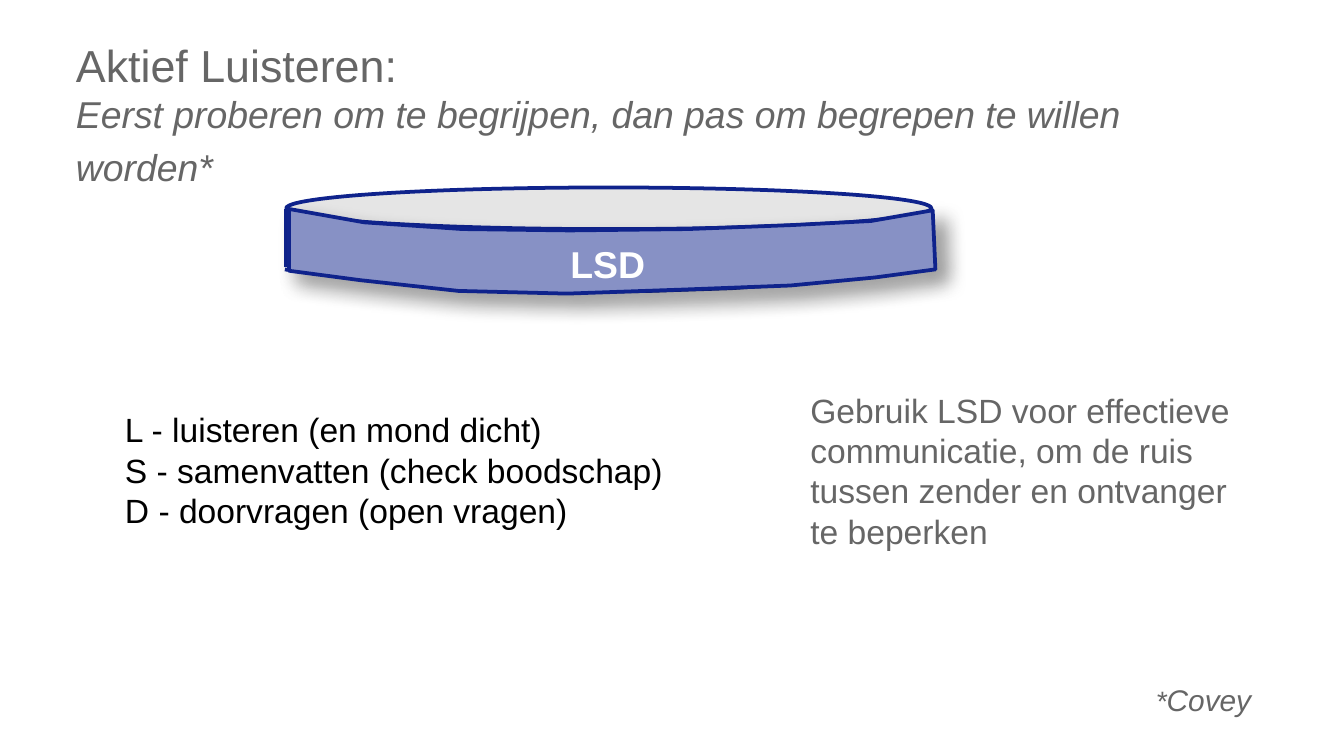
import dataclasses

import lxml.etree
import pptx
import pptx.dml.color
import pptx.enum.shapes
import pptx.enum.text
import pptx.oxml.ns
import pptx.util

PX = 4572  # EMU in one px, 200 px to the inch


@dataclasses.dataclass(frozen=True)
class Theme:
    font: str = "Arial"
    grey: str = "666666"
    black: str = "000000"
    white: str = "FFFFFF"
    outline: str = "0F238C"
    top: str = "E5E5E5"
    side: str = "8791C5"
    line_width: int = 2
    title_size: int = 24
    subtitle_size: int = 20
    body_size: int = 18
    note_size: int = 16
    mark_size: int = 15


THEME = Theme()


def color(value):
    return pptx.dml.color.RGBColor.from_string(value)


def lengths(*values):
    return [pptx.util.Emu(value * PX) for value in values]


def add_text(slide, box, paragraphs, size=THEME.body_size, fill=THEME.grey, bold=False,
             italic=False, inset=0, wrap=True, anchor=pptx.enum.text.MSO_ANCHOR.TOP):
    """Each paragraph is a string or a list of (text, format overrides)."""
    shape = slide.shapes.add_textbox(*lengths(*box))
    frame = shape.text_frame
    frame.word_wrap = wrap
    frame.vertical_anchor = anchor
    frame.margin_left = frame.margin_right = pptx.util.Emu(inset * PX)
    frame.margin_top = frame.margin_bottom = pptx.util.Emu(inset * PX)
    for index, content in enumerate(paragraphs):
        paragraph = frame.paragraphs[0] if index == 0 else frame.add_paragraph()
        runs = [(content, {})] if isinstance(content, str) else content
        for text, overrides in runs:
            if text == "\n":
                paragraph.add_line_break()
                continue
            run = paragraph.add_run()
            run.text = text
            run.font.name = THEME.font
            run.font.size = pptx.util.Pt(overrides.get("size", size))
            run.font.bold = bold
            run.font.italic = overrides.get("italic", italic)
            run.font.color.rgb = color(fill)
    return shape


def style(shape, fill=None, shadow=True):
    """Outline every part alike; add the fill and drop shadow when wanted."""
    shape.line.color.rgb = color(THEME.outline)
    shape.line.width = pptx.util.Pt(THEME.line_width)
    if fill:
        shape.fill.solid()
        shape.fill.fore_color.rgb = color(fill)
    elif hasattr(shape, "fill"):
        shape.fill.background()
    name = pptx.oxml.ns.qn
    effects = lxml.etree.SubElement(shape._element.spPr, name("a:effectLst"))
    if shadow:
        outer = lxml.etree.SubElement(
            effects, name("a:outerShdw"), blurRad=str(pptx.util.Pt(10)),
            dist=str(pptx.util.Pt(8)), dir=str(45 * 60000), algn="ctr", rotWithShape="0")
        shade = lxml.etree.SubElement(outer, name("a:srgbClr"), val=THEME.black)
        lxml.etree.SubElement(shade, name("a:alpha"), val="35000")


def add_outline(slide, left, top, points, close):
    builder = slide.shapes.build_freeform(*points[0], scale=PX)
    builder.add_line_segments(points[1:], close=close)
    return builder.convert_to_shape(*lengths(left, top))


def bezier(start, first, second, end, steps=16):
    points = []
    for step in range(steps + 1):
        t = step / steps
        weights = ((1 - t) ** 3, 3 * t * (1 - t) ** 2, 3 * t ** 2 * (1 - t), t ** 3)
        points.append(tuple(
            sum(weight * value for weight, value in zip(weights, axis))
            for axis in zip(start, first, second, end)))
    return points


def add_heading(slide, box):
    add_text(
        slide, box,
        [[("Aktief Luisteren: ", {}), ("\n", {}),
          ("Eerst proberen om te begrijpen, dan pas om begrepen te willen worden*",
           {"size": THEME.subtitle_size, "italic": True}),
          (" ", {"italic": True})]],
        size=THEME.title_size, inset=7, anchor=pptx.enum.text.MSO_ANCHOR.BOTTOM)


def add_disc(slide, box):
    left, top, width, height = box

    # Top face
    face = slide.shapes.add_shape(
        pptx.enum.shapes.MSO_SHAPE.OVAL, *lengths(left, top, width, 62))
    style(face, THEME.top, shadow=False)

    # Upright edges
    for x in (left, left + width):
        edge = slide.shapes.add_connector(
            pptx.enum.shapes.MSO_CONNECTOR.STRAIGHT, *lengths(x, top + 119, x, top + 32))
        style(edge)

    # Bottom rim
    rim = bezier((-2, 122), (318, 166), (640, 166), (964, 120))
    style(add_outline(slide, left, top, rim, close=False))

    # Side wall: lower edge left to right, then upper edge back
    lower = [(4, 124), (110, 138), (256, 154), (418, height),
             (592, 152), (750, 146), (876, 134), (966, 122)]
    upper = [(962, 34), (870, 50), (754, 56), (598, 62),
             (422, 64), (262, 62), (116, 52), (4, 32)]
    style(add_outline(slide, left, top, lower + upper, close=True), THEME.side)

    # Label
    add_text(slide, (left + 423, top + 80, 114, 62), ["LSD"], size=THEME.subtitle_size,
             fill=THEME.white, bold=True, wrap=False)


def add_steps(slide, box):
    add_text(slide, box,
             ["L - luisteren (en mond dicht)",
              "S - samenvatten (check boodschap)",
              "D - doorvragen (open vragen)"],
             fill=THEME.black, wrap=False)


def add_advice(slide, box):
    add_text(slide, box,
             ["Gebruik LSD voor effectieve communicatie, om de ruis tussen zender "
              "en ontvanger te beperken"])


def add_source_note(slide, box):
    add_text(slide, box, [[("*", {"size": THEME.mark_size}), ("Covey", {})]],
             size=THEME.note_size, italic=True, wrap=False)


def main():
    presentation = pptx.Presentation()
    presentation.slide_width, presentation.slide_height = lengths(2000, 1125)
    slide = presentation.slides.add_slide(presentation.slide_layouts[6])
    add_heading(slide, (106, 22, 1610, 268))
    add_disc(slide, (426, 279, 960, 158))
    add_steps(slide, (186, 609, 818, 174))
    add_source_note(slide, (1720, 1015, 144, 48))
    add_advice(slide, (1206, 580, 660, 232))
    presentation.save("out.pptx")


if __name__ == "__main__":
    main()
